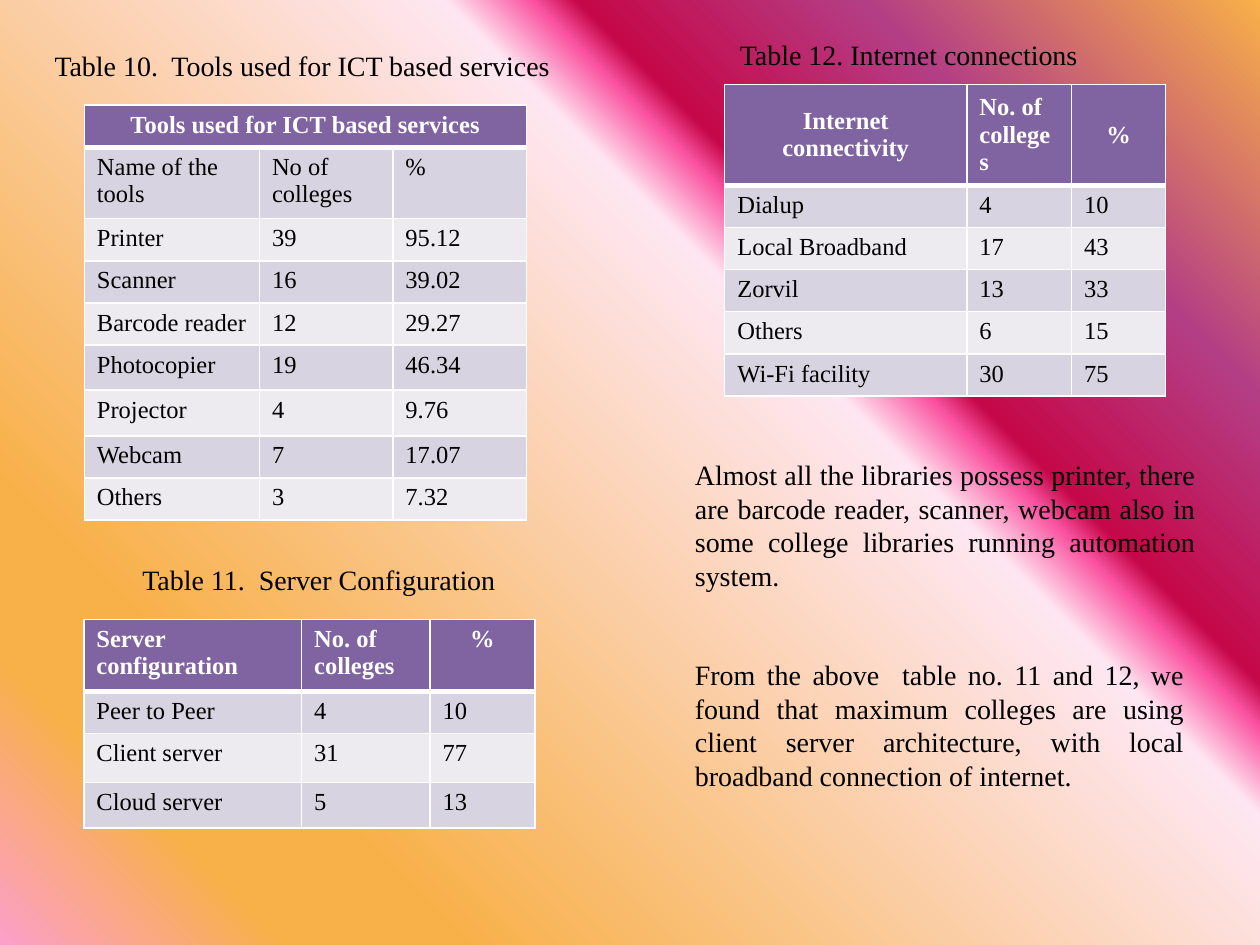
from lxml.etree import SubElement
from pptx import Presentation
from pptx.dml.color import RGBColor
from pptx.enum.text import MSO_ANCHOR as ANCHOR, MSO_AUTO_SIZE as AUTO, PP_ALIGN as ALIGN
from pptx.oxml.ns import qn
from pptx.util import Cm, Pt

FONT = "Times New Roman"
WHITE = RGBColor(0xFF, 0xFF, 0xFF)
BLACK = RGBColor(0x00, 0x00, 0x00)
PURPLE = RGBColor(0x80, 0x64, 0xA2)
BAND_DARK = RGBColor(0xD8, 0xD3, 0xE0)
BAND_LIGHT = RGBColor(0xED, 0xEA, 0xF0)
BACKGROUND_STOPS = [
    (0, RGBColor(0xFC, 0x9F, 0xCB)), (13, RGBColor(0xF8, 0xB0, 0x49)),
    (21, RGBColor(0xF8, 0xB0, 0x49)), (63, RGBColor(0xFE, 0xE7, 0xF2)),
    (67, RGBColor(0xF9, 0x52, 0xA0)), (69, RGBColor(0xC5, 0x08, 0x49)),
    (82, RGBColor(0xB4, 0x3E, 0x85)), (100, RGBColor(0xF8, 0xB0, 0x49)),
]

TOOLS = [
    ("Tools used for ICT based services", "", ""),
    ("Name of the tools", "No of colleges", "%"),
    ("Printer", "39", "95.12"),
    ("Scanner", "16", "39.02"),
    ("Barcode reader", "12", "29.27"),
    ("Photocopier", "19", "46.34"),
    ("Projector", "4", "9.76"),
    ("Webcam", "7", "17.07"),
    ("Others", "3", "7.32"),
]
SERVERS = [
    ("Server configuration", "No. of colleges", "%"),
    ("Peer to Peer", "4", "10"),
    ("Client server", "31", "77"),
    ("Cloud server", "5", "13"),
]
INTERNET = [
    ("Internet connectivity", "No. of colleges", "%"),
    ("Dialup", "4", "10"),
    ("Local Broadband", "17", "43"),
    ("Zorvil", "13", "33"),
    ("Others", "6", "15"),
    ("Wi-Fi facility", "30", "75"),
]


def paint_background(slide):
    """Diagonal gradient from bottom left to top right."""
    fill = slide.background.fill
    fill.gradient()
    fill.gradient_angle = 45
    stops = slide.element.find(".//" + qn("a:gsLst"))
    for old in list(stops):
        stops.remove(old)
    for pos, color in BACKGROUND_STOPS:
        stop = SubElement(stops, qn("a:gs"), pos=str(pos * 1000))
        SubElement(stop, qn("a:srgbClr"), val=str(color))


def set_borders(cell, top, bottom):
    tc_pr = cell._tc.get_or_add_tcPr()
    for side, width in (("L", 1), ("R", 1), ("T", top), ("B", bottom)):
        ln = SubElement(tc_pr, qn("a:ln" + side), w=str(Pt(width)))
        SubElement(SubElement(ln, qn("a:solidFill")), qn("a:srgbClr"), val=str(WHITE))


def set_font(p, size, color, bold=False):
    p.font.name, p.font.size, p.font.bold = FONT, Pt(size), bold
    p.font.color.rgb = color


def add_data_table(slide, left, top, widths, heights, rows, centered=(), anchor=ANCHOR.TOP):
    """Banded table with a purple header; centered lists header columns."""
    table = slide.shapes.add_table(len(rows), len(widths), Cm(left), Cm(top),
                                   Cm(sum(widths)), Cm(sum(heights))).table
    table.horz_banding = False
    for column, width in zip(table.columns, widths):
        column.width = Cm(width)
    for i, (values, height) in enumerate(zip(rows, heights)):
        table.rows[i].height = Cm(height)
        header = i == 0
        for j, value in enumerate(values):
            cell = table.cell(i, j)
            set_borders(cell, top=3 if i == 1 else 1, bottom=3 if header else 1)
            cell.fill.solid()
            cell.fill.fore_color.rgb = PURPLE if header else BAND_DARK if i % 2 else BAND_LIGHT
            cell.text = value
            p = cell.text_frame.paragraphs[0]
            set_font(p, 14, WHITE if header else BLACK, header)
            if header:
                cell.vertical_anchor = anchor
                if j in centered:
                    p.alignment = ALIGN.CENTER
    return table


def add_text(slide, left, top, width, height, text, align, wrap=True, indent=0):
    tf = slide.shapes.add_textbox(Cm(left), Cm(top), Cm(width), Cm(height)).text_frame
    tf.word_wrap = wrap
    tf.auto_size = AUTO.SHAPE_TO_FIT_TEXT
    tf.margin_left = Cm(0.25 + indent)
    p = tf.paragraphs[0]
    p.text, p.alignment = text, align
    set_font(p, 16, BLACK)


def tools_region(slide, left, top):
    add_text(slide, left, top, 10.64, 0.94, "Table 10.  Tools used for ICT based services",
             ALIGN.LEFT, wrap=False)
    table = add_data_table(slide, left + 0.85, top + 1.27, [3.53, 2.69, 2.69],
                           [0.83, 1.31, 0.81, 0.85, 0.81, 0.91, 0.92, 0.79, 0.8],
                           TOOLS, centered=(0,))
    table.cell(0, 0).merge(table.cell(0, 2))


def server_region(slide, left, top):
    add_text(slide, left, top, 9.96, 0.94, "Table 11.  Server Configuration",
             ALIGN.CENTER, indent=0.36)
    add_data_table(slide, left + 0.42, top + 1.27, [4.39, 2.59, 2.11],
                   [1.45, 0.84, 0.99, 0.91], SERVERS, centered=(2,))


def internet_region(slide, left, top):
    add_text(slide, left, top, 9.96, 0.94, "Table 12. Internet connections", ALIGN.CENTER)
    add_data_table(slide, left + 1.27, top + 1.06, [4.88, 2.11, 1.9],
                   [2.02] + [0.85] * 5, INTERNET, centered=(0, 2), anchor=ANCHOR.MIDDLE)


def findings_region(slide, left, top):
    add_text(slide, left, top, 10.59, 3,
             "Almost all the libraries possess printer, there are barcode reader, scanner, "
             "webcam also in some college libraries running automation system.", ALIGN.JUSTIFY)
    add_text(slide, left, top + 4.03, 10.36, 3,
             "From the above  table no. 11 and 12, we found that maximum colleges are using "
             "client server architecture, with local broadband connection of internet.",
             ALIGN.JUSTIFY)


def main():
    prs = Presentation()
    prs.slide_width, prs.slide_height = Cm(25.4), Cm(19.05)
    slide = prs.slides.add_slide(prs.slide_layouts[6])
    paint_background(slide)
    tools_region(slide, 0.85, 0.85)
    server_region(slide, 1.27, 11.22)
    internet_region(slide, 13.34, 0.64)
    findings_region(slide, 13.76, 9.1)
    prs.save("out.pptx")


if __name__ == "__main__":
    main()
